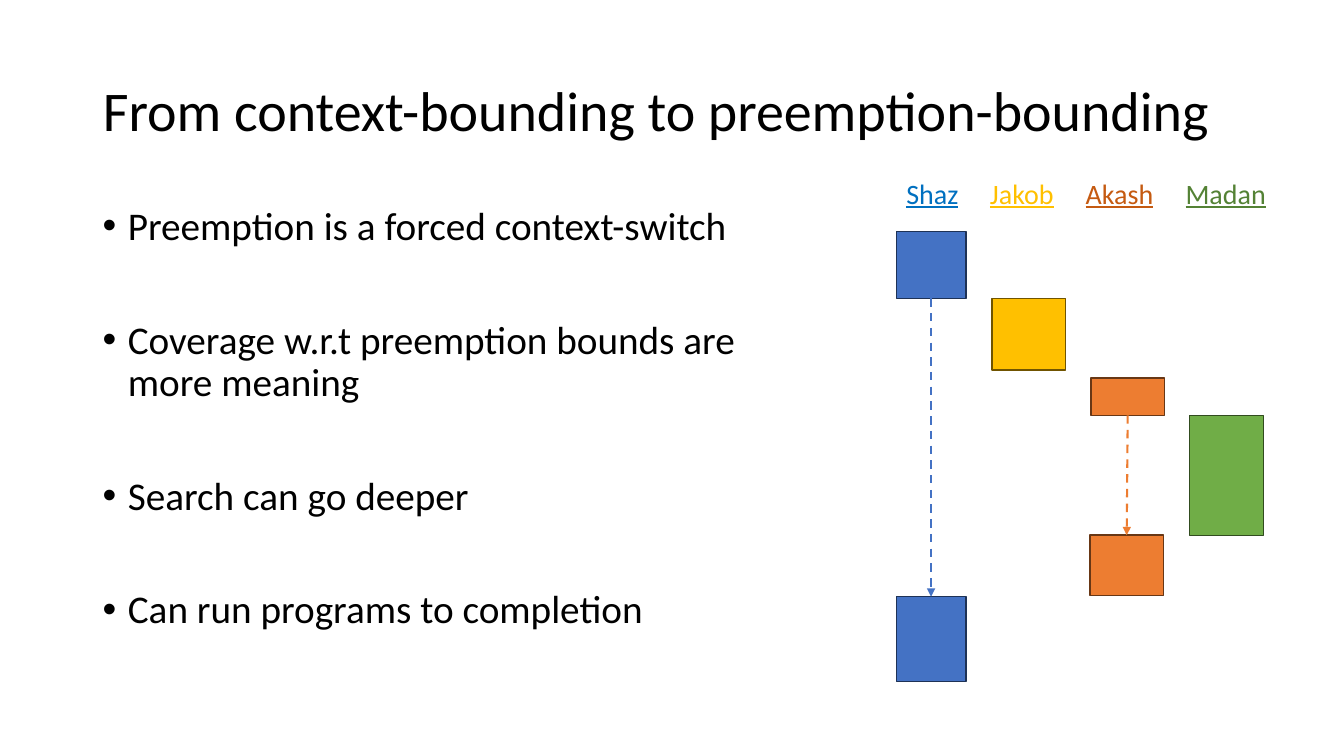
import pptx
import pptx.dml.color
import pptx.enum.dml
import pptx.enum.shapes
import pptx.enum.text
import pptx.util
import lxml.etree
from dataclasses import dataclass

PX = 9144  # EMU per px, 100 px to the inch


@dataclass(frozen=True)
class Theme:
    font: str = "Calibri"
    ink: str = "000000"
    title: int = 40
    body: int = 28
    label: int = 20
    edge: float = 1
    dash: float = 1.5
    gap: int = 51
    blue: tuple = ("4472C4", "1E3256", "0070C0")  # fill, edge, label
    gold: tuple = ("FFC000", "705400", "FFC000")
    rust: tuple = ("ED7D31", "683715", "C55A11")
    green: tuple = ("70AD47", "314C1F", "548235")


THEME = Theme()

POINTS = [
    "Preemption is a forced context-switch",
    "Coverage w.r.t preemption bounds are more meaning",
    "Search can go deeper",
    "Can run programs to completion",
]

# Name, colours, label left and width, then the boxes of each thread
THREADS = [
    ("Shaz", THEME.blue, 889, 72, [(889, 230, 69, 66), (889, 592, 69, 84)]),
    ("Jakob", THEME.gold, 972, 84, [(984, 296, 73, 71)]),
    ("Akash", THEME.rust, 1067, 88, [(1082, 375, 73, 37), (1081, 531, 73, 60)]),
    ("Madan", THEME.green, 1166, 101, [(1180, 412, 73, 119)]),
]


def px(*nums):
    return [pptx.util.Emu(n * PX) for n in nums]


def rgb(code):
    return pptx.dml.color.RGBColor.from_string(code)


def tag(node, name, **attrs):
    return lxml.etree.SubElement(node, pptx.oxml.ns.qn(name), attrs)


def style(para, size, color, line=None):
    para.alignment = pptx.enum.text.PP_ALIGN.LEFT
    para.line_spacing = line
    for run in para.runs:
        run.font.name = THEME.font
        run.font.size = pptx.util.Pt(size)
        run.font.color.rgb = rgb(color)


def add_title(slide, text):
    title = slide.shapes.title
    title.left, title.top, title.width, title.height = px(92, 40, 1150, 145)
    frame = title.text_frame
    frame.text = text
    frame.auto_size = pptx.enum.text.MSO_AUTO_SIZE.NONE
    frame.vertical_anchor = pptx.enum.text.MSO_ANCHOR.MIDDLE
    style(frame.paragraphs[0], THEME.title, THEME.ink, 0.9)


def add_list(slide, points):
    frame = slide.shapes.add_textbox(*px(92, 200, 738, 476)).text_frame
    frame.word_wrap = True
    frame.text = "\n".join(points)
    for i, para in enumerate(frame.paragraphs):
        style(para, THEME.body, THEME.ink, 0.9)
        para.space_before = pptx.util.Pt(THEME.gap if i else 0)
        props = para._p.get_or_add_pPr()
        props.set("marL", str(25 * PX))
        props.set("indent", str(-25 * PX))
        tag(props, "a:buFont", typeface="Arial")
        tag(props, "a:buChar", char="•")


def add_label(slide, name, color, left, width):
    frame = slide.shapes.add_textbox(*px(left, 170, width, 44)).text_frame
    frame.word_wrap = False
    frame.auto_size = pptx.enum.text.MSO_AUTO_SIZE.SHAPE_TO_FIT_TEXT
    frame.text = name
    style(frame.paragraphs[0], THEME.label, color)
    frame.paragraphs[0].runs[0].font.underline = True


def add_box(slide, spot, fill, edge):
    rect = pptx.enum.shapes.MSO_SHAPE.RECTANGLE
    box = slide.shapes.add_shape(rect, *px(*spot))
    box.shadow.inherit = False
    box.fill.solid()
    box.fill.fore_color.rgb = rgb(fill)
    box.line.color.rgb = rgb(edge)
    box.line.width = pptx.util.Pt(THEME.edge)
    return box


def add_arrow(slide, start, end, color):
    kind = pptx.enum.shapes.MSO_CONNECTOR.STRAIGHT
    arrow = slide.shapes.add_connector(kind, 0, 0, 0, 0)
    arrow.begin_connect(start, 2)
    arrow.end_connect(end, 0)
    arrow.line.color.rgb = rgb(color)
    arrow.line.width = pptx.util.Pt(THEME.dash)
    arrow.line.dash_style = pptx.enum.dml.MSO_LINE.DASH
    tag(arrow.line._get_or_add_ln(), "a:tailEnd", type="triangle")
    tag(arrow._element.spPr, "a:effectLst")


def main():
    deck = pptx.Presentation()
    deck.slide_width, deck.slide_height = px(1333, 750)
    slide = deck.slides.add_slide(deck.slide_layouts[5])

    # Text
    add_title(slide, "From context-bounding to preemption-bounding")
    add_list(slide, POINTS)

    # Thread schedule: an arrow joins the parts of a preempted thread
    for name, (fill, edge, ink), left, width, spots in THREADS:
        add_label(slide, name, ink, left, width)
        boxes = [add_box(slide, spot, fill, edge) for spot in spots]
        for start, end in zip(boxes, boxes[1:]):
            add_arrow(slide, start, end, fill)

    deck.save("out.pptx")


if __name__ == "__main__":
    main()
